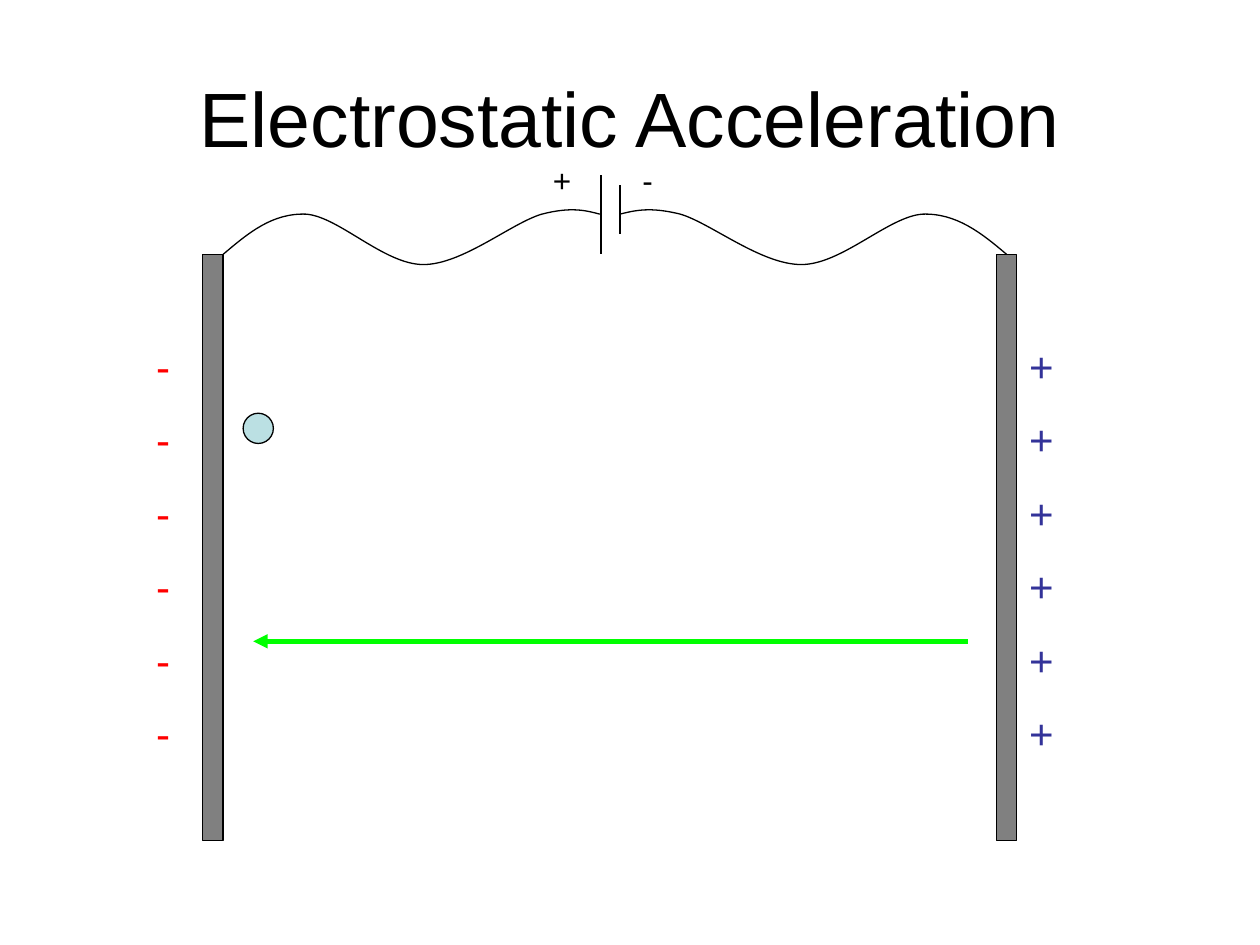
"""Build a slide on electrostatic acceleration between two charged plates."""
from pptx import Presentation
from pptx.dml.color import RGBColor
from pptx.enum.shapes import MSO_CONNECTOR as CONN, MSO_SHAPE as SHAPE
from pptx.enum.text import MSO_ANCHOR as ANCHOR, PP_ALIGN as ALIGN
from pptx.oxml.ns import qn
from pptx.oxml.xmlchemy import OxmlElement as Node
from pptx.util import Inches, Pt

BLACK = RGBColor(0, 0, 0)
GRAY = RGBColor(0x80, 0x80, 0x80)
RED = RGBColor(0xFF, 0, 0)
BLUE = RGBColor(0x33, 0x33, 0x99)
GREEN = RGBColor(0, 0xFF, 0)
PALE = RGBColor(0xBB, 0xE0, 0xE3)

deck = Presentation()
deck.slide_width, deck.slide_height = Inches(10), Inches(7.5)
COL, ROW = deck.slide_width / 100, deck.slide_height / 75
slide = deck.slides.add_slide(deck.slide_layouts[5])
shapes = slide.shapes


def grid(*cells):
    return [round(n * (ROW if i % 2 else COL)) for i, n in enumerate(cells)]


def style(para, size, color):
    for key, val in {"name": "Arial", "size": Pt(size)}.items():
        setattr(para.font, key, val)
    para.font.color.rgb = color


title = shapes.title
for key, val in zip(("left", "top", "width", "height"), grid(5, 3, 90, 12.5)):
    setattr(title, key, val)
title.text_frame.text = "Electrostatic Acceleration"
title.text_frame.vertical_anchor = ANCHOR.MIDDLE
head = title.text_frame.paragraphs[0]
head.alignment = ALIGN.CENTER
style(head, 44, BLACK)

lines = [
    ((76.8, 50.9, 20.1, 50.9), GREEN, 2.75),
    ((47.7, 13.9, 47.7, 20.2), BLACK, 0.75),
    ((49.2, 14.7, 49.2, 18.6), BLACK, 0.75),
]
for ends, color, width in lines:
    line = shapes.add_connector(CONN.STRAIGHT, *grid(*ends))
    line.line.color.rgb = color
    line.line.width = Pt(width)
    if color == GREEN:
        tip = Node("a:tailEnd")
        tip.set("type", "triangle")
        line.line._get_or_add_ln().append(tip)
    line._element.spPr.append(Node("a:effectLst"))

heights = (20.2, 18.5, 16.9, 17, 17.2, 21, 21, 21, 17.7, 17, 16.4, 16.7, 17)
wires = [
    (17.7, 19.7, 21.6, 24.3, 26.9, 30.5, 33.6, 36.7, 40.6, 43, 45.3, 46.5, 47.6),
    (79.9, 77.9, 75.9, 73.2, 70.5, 66.8, 63.6, 60.4, 56.4, 54, 51.6, 50.4, 49.2),
]
for wire in wires:
    spots = [grid(x, y) for x, y in zip(wire, heights)]
    pen = shapes.build_freeform(*spots[0])
    pen.add_line_segments(spots[1:], close=False)
    curve = pen.convert_to_shape()
    curve.shadow.inherit = False
    curve.fill.background()
    curve.line.color.rgb = BLACK
    curve.line.width = Pt(0.75)
    steps = list(curve._element.iter(qn("a:lnTo")))
    for i in range(0, len(steps), 3):
        bend = Node("a:cubicBezTo")
        steps[i].addprevious(bend)
        for step in steps[i:i + 3]:
            bend.append(step[0])
            step.getparent().remove(step)

signs = [
    ("+", 6, (80.7, 26.5, 4.7, 34.9), 24, BLUE),
    ("-", 6, (11.4, 26.5, 4.7, 34.9), 24, RED),
    ("+", 1, (42.9, 12.3, 3.9, 4), 18, BLACK),
    ("-", 1, (50, 12.3, 7.1, 4), 18, BLACK),
]
for sign, count, area, size, color in signs:
    frame = shapes.add_textbox(*grid(*area)).text_frame
    frame.word_wrap = True
    frame.text = "\n".join([sign] * count)
    for i, para in enumerate(frame.paragraphs):
        para.space_before = Pt(13.2 if i else 0)
        style(para, size, color)

solids = [
    (SHAPE.OVAL, (19.3, 32.8, 2.4, 2.4), PALE),
    (SHAPE.RECTANGLE, (16.1, 20.2, 1.6, 46.5), GRAY),
    (SHAPE.RECTANGLE, (79.1, 20.2, 1.6, 46.5), GRAY),
]
for kind, area, color in solids:
    solid = shapes.add_shape(kind, *grid(*area))
    solid.shadow.inherit = False
    solid.fill.solid()
    solid.fill.fore_color.rgb = color
    solid.line.color.rgb = BLACK
    solid.line.width = Pt(0.75)

deck.save("out.pptx")
